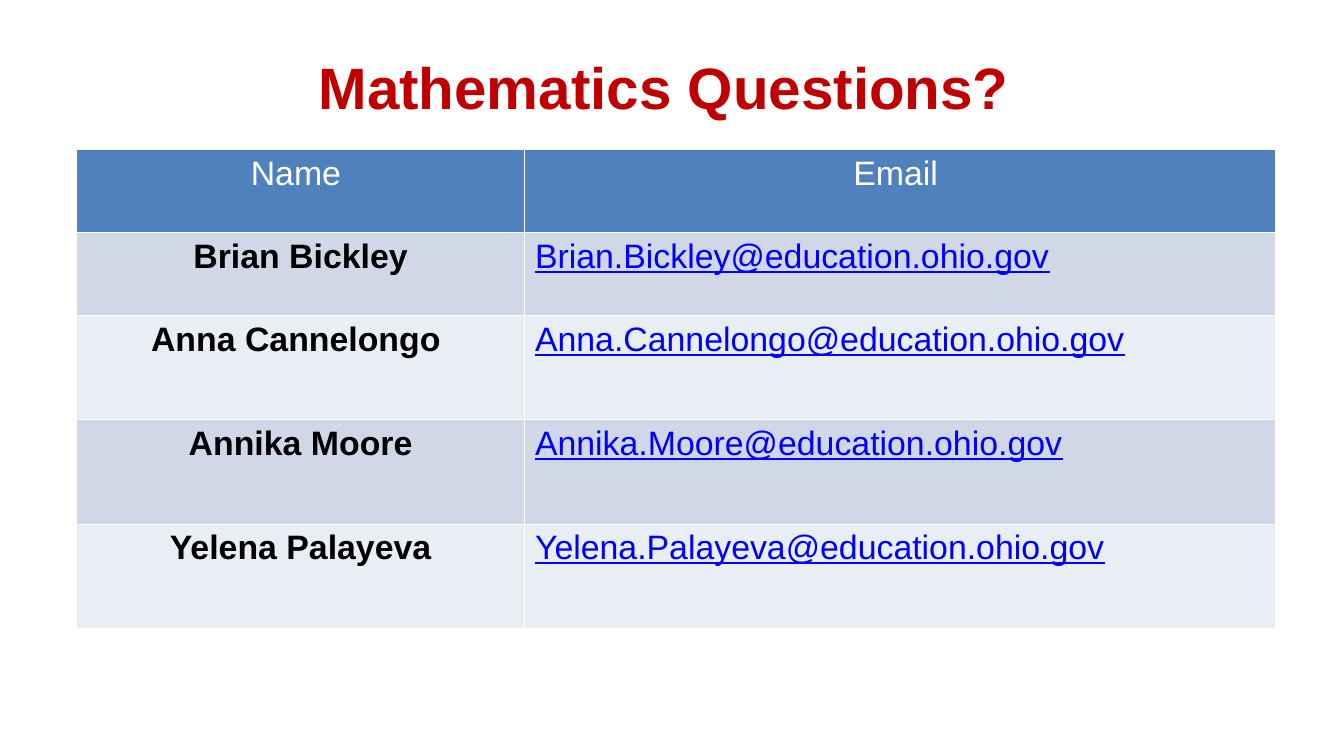
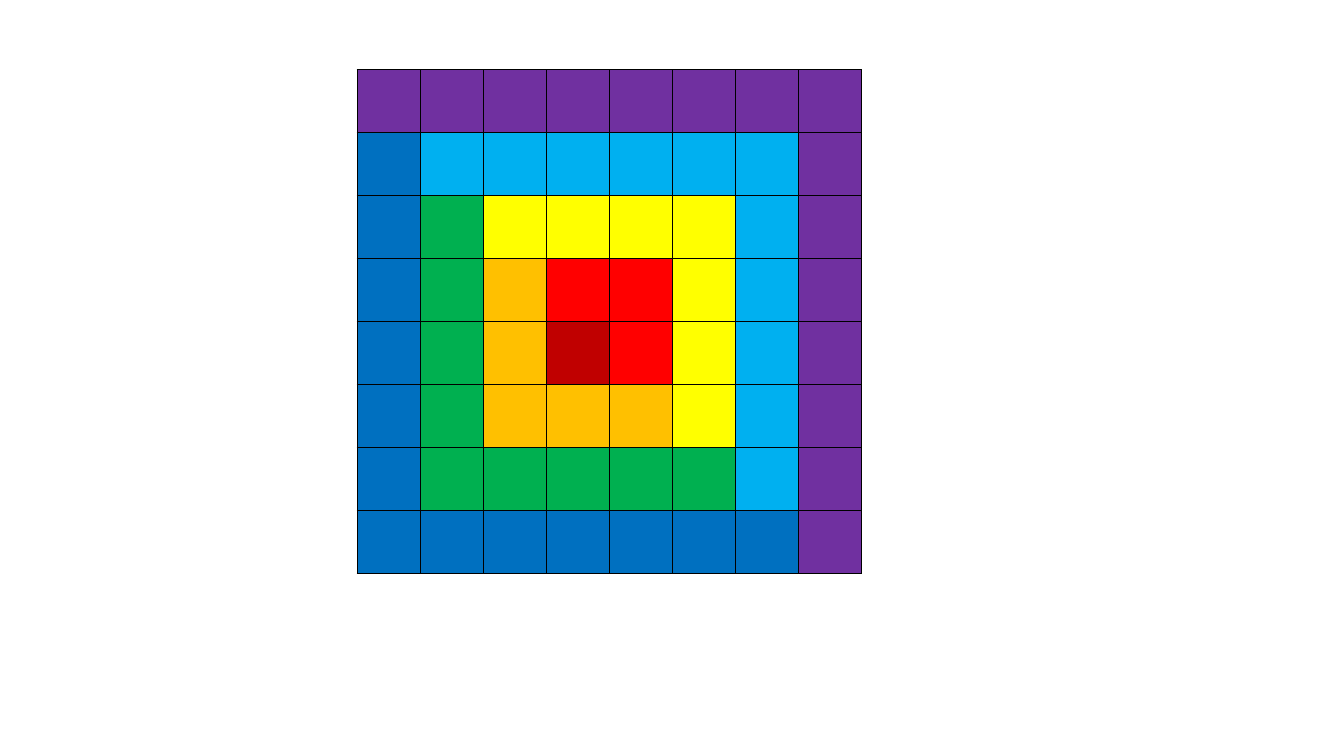
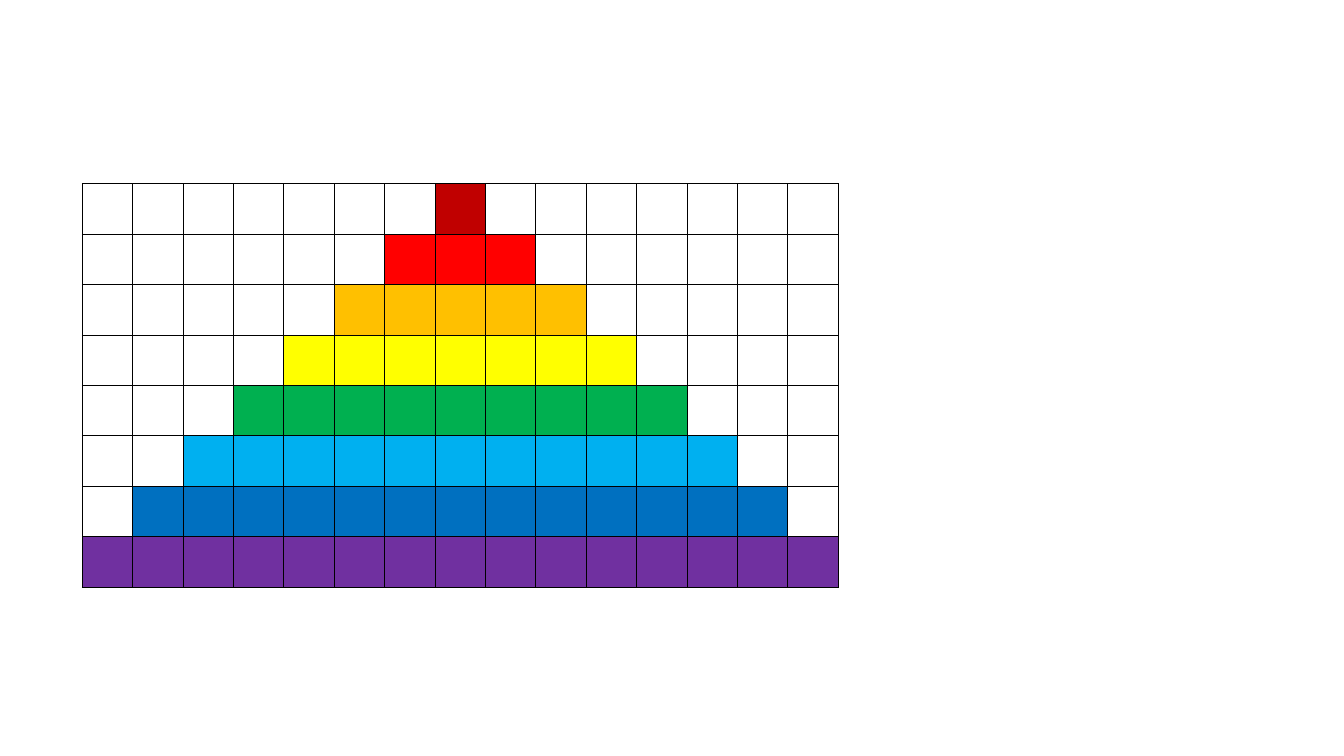
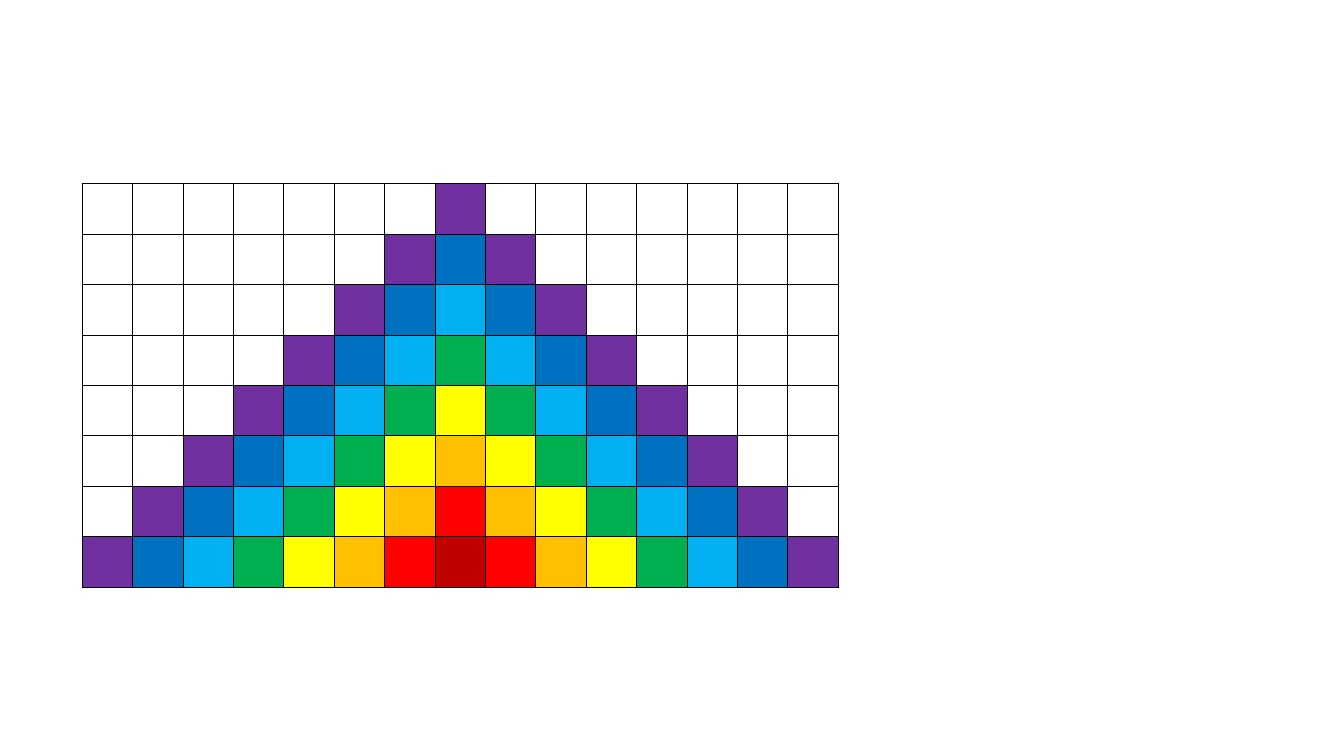
from dataclasses import dataclass

from lxml.etree import SubElement
from pptx import Presentation
from pptx.dml.color import RGBColor
from pptx.enum.text import MSO_ANCHOR as Anchor, MSO_AUTO_SIZE as AutoSize, PP_ALIGN as Align
from pptx.oxml.ns import qn
from pptx.util import Inches, Pt


@dataclass(frozen=True)
class Theme:
    """Colours, font and sizes shared by all slides."""

    font: str = "Arial"
    title_size: int = 50
    table_size: int = 29
    line_width: int = 1
    title: str = "C00000"
    header: str = "4F81BD"
    bands: tuple = ("D0D8E8", "E9EDF4")
    white: str = "FFFFFF"
    ink: str = "000000"
    link: str = "0000FF"
    spectrum: tuple = ("C00000", "FF0000", "FFC000", "FFFF00",
                       "00B050", "00B0F0", "0070C0", "7030A0")


@dataclass(frozen=True)
class Box:
    """A region measured in columns and rows of the slide grid."""

    left: float
    top: float
    width: float
    height: float

    def lengths(self):
        """Return left, top, width and height as slide lengths."""
        return [Inches(value) for value in (self.left, self.top, self.width, self.height)]


THEME = Theme()
GRID_COLUMNS, GRID_ROWS = 16, 9
TITLE_ONLY, BLANK = 5, 6
TITLE_BOX = Box(0.8, 0.6, 14.4, 0.84)
CONTACT_BOX = Box(0.91, 1.78, 14.29, 5.71)
SQUARE_BOX = Box(4.25, 0.83, 6, 6)
TRIANGLE_BOX = Box(0.98, 2.19, 9, 4.8)
CONTACT_COLUMNS = (5.34, 8.94)
CONTACT_ROWS = (0.99, 0.99, 1.24, 1.24, 1.24)
CONTACTS = (
    ("Name ", "Email "),
    ("Brian Bickley", "Brian.Bickley@education.ohio.gov"),
    ("Anna Cannelongo ", "Anna.Cannelongo@education.ohio.gov"),
    ("Annika Moore", "Annika.Moore@education.ohio.gov"),
    ("Yelena Palayeva", "Yelena.Palayeva@education.ohio.gov"),
)
LEVELS = len(THEME.spectrum)
TRIANGLE_COLUMNS = 2 * LEVELS - 1
SEED_ROW, SEED_COLUMN = 4, 3


def style_font(font, size, color, bold=False, underline=False):
    """Set the whole look of a font."""
    font.name, font.size = THEME.font, Pt(size)
    font.bold, font.underline = bold, underline
    font.color.rgb = RGBColor.from_string(color)


def style_cell(cell, fill, border):
    """Give a cell its four borders and its fill."""
    properties = cell._tc.get_or_add_tcPr()
    for side in ("a:lnL", "a:lnR", "a:lnT", "a:lnB"):
        line = SubElement(properties, qn(side), w=str(Pt(THEME.line_width)))
        solid = SubElement(line, qn("a:solidFill"))
        SubElement(solid, qn("a:srgbClr"), val=border)
    if fill:
        cell.fill.solid()
        cell.fill.fore_color.rgb = RGBColor.from_string(fill)
    else:
        cell.fill.background()


def add_plain_table(page, box, widths, heights):
    """Add a table without style bands and return it."""
    table = page.shapes.add_table(len(heights), len(widths), *box.lengths()).table
    table.first_row = table.horz_banding = False
    for column, width in zip(table.columns, widths):
        column.width = Inches(width)
    for row, height in zip(table.rows, heights):
        row.height = Inches(height)
    return table


def add_title(page, box, text):
    """Place and format the title placeholder."""
    title = page.shapes.title
    title.left, title.top, title.width, title.height = box.lengths()
    frame = title.text_frame
    frame.margin_left = frame.margin_right = frame.margin_top = frame.margin_bottom = 0
    frame.auto_size, frame.vertical_anchor = AutoSize.NONE, Anchor.MIDDLE
    frame.word_wrap = True
    para = frame.paragraphs[0]
    para.text, para.alignment = text, Align.CENTER
    style_font(para.font, THEME.title_size, THEME.title, bold=True)


def add_contacts(page, box):
    """Fill the box with the table of names and addresses."""
    table = add_plain_table(page, box, CONTACT_COLUMNS, CONTACT_ROWS)
    for row, texts in enumerate(CONTACTS):
        for column, text in enumerate(texts):
            cell = table.cell(row, column)
            is_header, is_link = row == 0, row > 0 and column == 1
            fill = THEME.header if is_header else THEME.bands[(row - 1) % 2]
            style_cell(cell, fill, THEME.white)
            cell.margin_left = cell.margin_right = Inches(0.12)
            cell.margin_top = cell.margin_bottom = Inches(0.06)
            para = cell.text_frame.paragraphs[0]
            para.text = text
            para.alignment = Align.LEFT if is_link else Align.CENTER
            color = THEME.white if is_header else THEME.link if is_link else THEME.ink
            style_font(para.font, THEME.table_size, color,
                       bold=not is_header and not is_link, underline=is_link)


def square_level(row, column):
    """Return the L-shaped layer, growing up-right and down-left in turn."""
    up, right = SEED_ROW - row, column - SEED_COLUMN
    return max(2 * step - 1 if step > 0 else -2 * step for step in (up, right))


def row_level(row, column):
    """Return the layer of a triangle striped by rows."""
    return row if abs(column - LEVELS + 1) <= row else None


def nested_level(row, column):
    """Return the layer of a triangle made of nested chevrons."""
    depth = row - abs(column - LEVELS + 1)
    return LEVELS - 1 - depth if depth >= 0 else None


def add_mosaic(page, box, columns, level_of):
    """Fill the box with equal cells coloured by their layer."""
    table = add_plain_table(page, box, [box.width / columns] * columns,
                            [box.height / LEVELS] * LEVELS)
    for row in range(LEVELS):
        for column in range(columns):
            level = level_of(row, column)
            fill = None if level is None else THEME.spectrum[level]
            style_cell(table.cell(row, column), fill, THEME.ink)


def main():
    """Build and save the deck."""
    deck = Presentation()
    deck.slide_width, deck.slide_height = Inches(GRID_COLUMNS), Inches(GRID_ROWS)
    page = deck.slides.add_slide(deck.slide_layouts[TITLE_ONLY])
    add_title(page, TITLE_BOX, "Mathematics Questions? ")
    add_contacts(page, CONTACT_BOX)
    for box, columns, level_of in (
        (SQUARE_BOX, LEVELS, square_level),
        (TRIANGLE_BOX, TRIANGLE_COLUMNS, row_level),
        (TRIANGLE_BOX, TRIANGLE_COLUMNS, nested_level),
    ):
        page = deck.slides.add_slide(deck.slide_layouts[BLANK])
        add_mosaic(page, box, columns, level_of)
    deck.save("out.pptx")


if __name__ == "__main__":
    main()
